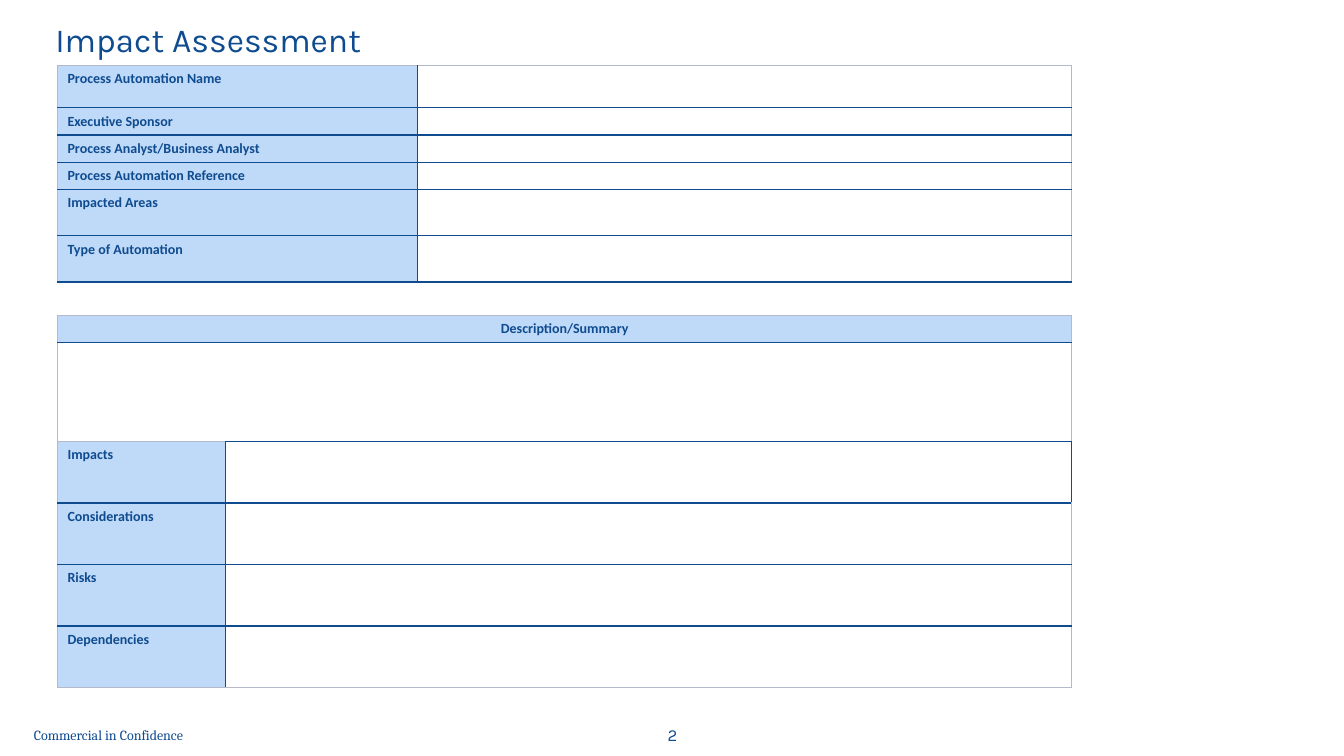
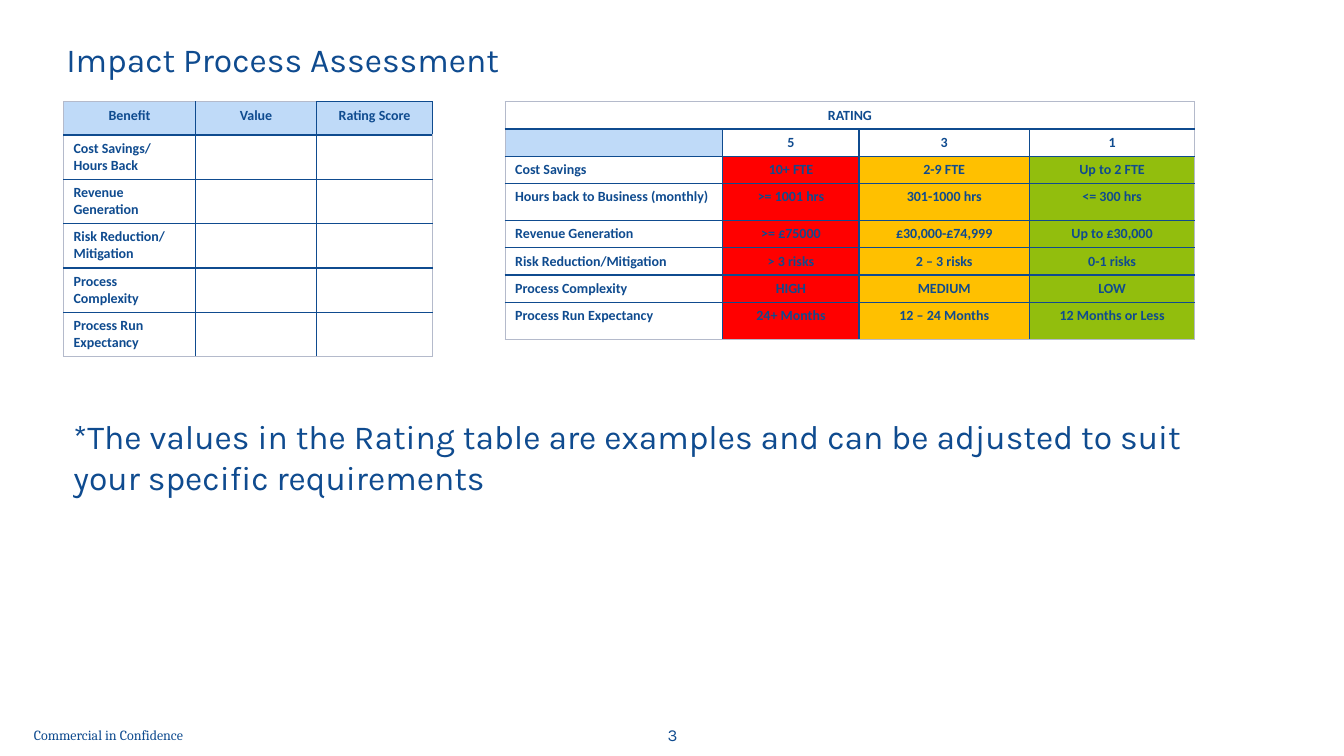
"""Build the two impact assessment slides."""
from dataclasses import dataclass

from lxml import etree
from pptx import Presentation
from pptx.dml.color import RGBColor
from pptx.enum.text import MSO_ANCHOR, PP_ALIGN
from pptx.oxml.ns import qn
from pptx.util import Emu, Pt

EMU_PER_PX = 9144
LEFT, CENTER = PP_ALIGN.LEFT, PP_ALIGN.CENTER
TOP, MIDDLE = MSO_ANCHOR.TOP, MSO_ANCHOR.MIDDLE


@dataclass(frozen=True)
class Theme:
    """Colours, fonts and type sizes of the deck."""
    navy: str = "0F4B8F"
    sky: str = "BFDAF8"
    white: str = "FFFFFF"
    edge: str = "B4BACB"
    red: str = "FF0000"
    amber: str = "FFC000"
    green: str = "92BE0D"
    title_font: str = "Karla"
    table_font: str = "Calibri"
    footer_font: str = "Cambria"
    title_size: int = 24
    number_size: int = 12
    small_size: int = 10
    line_width: float = 1
    edge_width: float = 0.75


THEME = Theme()


@dataclass(frozen=True)
class Label:
    """A text box with one paragraph."""
    text: str
    x: int
    y: int
    w: int
    h: int
    font: str = THEME.title_font
    size: int = THEME.title_size
    align: PP_ALIGN = LEFT
    anchor: MSO_ANCHOR = TOP
    inset: tuple[int, int] = (10, 5)


@dataclass(frozen=True)
class Grid:
    """A table with header rows, body column fills and accented borders."""
    x: int
    y: int
    cols: tuple[int, ...]
    heights: tuple[int, ...]
    texts: tuple[tuple[str, ...], ...]
    body_fills: tuple[str, ...]
    head_fills: tuple[tuple[str, ...], ...] = ()
    merge_top: bool = False
    accents: tuple[tuple[int, int, str], ...] = ()


@dataclass(frozen=True)
class Page:
    """The content of one slide."""
    number: int
    labels: tuple[Label, ...]
    grids: tuple[Grid, ...]


def px(value: int) -> Emu:
    """Turn px into EMU."""
    return Emu(value * EMU_PER_PX)


def style_run(r, font: str, size: int, bold: bool = False) -> None:
    """Format a run in navy."""
    r.font.name = font
    r.font.size = Pt(size)
    r.font.bold = bold
    r.font.color.rgb = RGBColor.from_string(THEME.navy)


def draw_label(s, label: Label) -> None:
    """Draw a text box."""
    sp = s.shapes.add_textbox(px(label.x), px(label.y), px(label.w), px(label.h))
    tf = sp.text_frame
    tf.word_wrap = True
    tf.vertical_anchor = label.anchor
    tf.margin_left = tf.margin_right = px(label.inset[0])
    tf.margin_top = tf.margin_bottom = px(label.inset[1])
    p = tf.paragraphs[0]
    p.text = label.text
    p.alignment = label.align
    style_run(p.runs[0], label.font, label.size)


def draw_border(cell, side: str, color: str, width: float) -> None:
    """Add a solid border to one side of a cell."""
    tc_pr = cell._tc.get_or_add_tcPr()
    ln = etree.SubElement(tc_pr, qn(f"a:ln{side}"), w=str(Pt(width)))
    fill = etree.SubElement(ln, qn("a:solidFill"))
    etree.SubElement(fill, qn("a:srgbClr"), val=color)


def draw_borders(cell, grid: Grid, row: int, col: int) -> None:
    """Draw pale outer and navy inner borders."""
    merged = grid.merge_top and row == 0
    outer = {
        "L": col == 0 or merged,
        "R": col == len(grid.cols) - 1 or merged,
        "T": row == 0,
        "B": row == len(grid.heights) - 1,
    }
    for side, is_outer in outer.items():
        if is_outer and (row, col, side) not in grid.accents:
            draw_border(cell, side, THEME.edge, THEME.edge_width)
        else:
            draw_border(cell, side, THEME.navy, THEME.line_width)


def fill_text(cell, text: str, align: PP_ALIGN) -> None:
    """Write a cell, keeping empty ones at the table type size."""
    p = cell.text_frame.paragraphs[0]
    if text:
        p.text = text
        p.alignment = align
        style_run(p.runs[0], THEME.table_font, THEME.small_size, True)
    else:
        etree.SubElement(p._p, qn("a:endParaRPr"), sz=str(THEME.small_size * 100))


def draw_grid(s, grid: Grid) -> None:
    """Draw a table."""
    frame = s.shapes.add_table(
        len(grid.heights), len(grid.cols), px(grid.x), px(grid.y),
        px(sum(grid.cols)), px(sum(grid.heights)))
    table = frame.table
    table.first_row = table.horz_banding = False
    for column, width in zip(table.columns, grid.cols):
        column.width = px(width)
    if grid.merge_top:
        table.cell(0, 0).merge(table.cell(0, len(grid.cols) - 1))
    heads = len(grid.head_fills)
    for row, height in enumerate(grid.heights):
        table.rows[row].height = px(height)
        fills = grid.head_fills[row] if row < heads else grid.body_fills
        for col, color in enumerate(fills):
            cell = table.cell(row, col)
            texts = grid.texts[row]
            align = CENTER if row < heads or col else LEFT
            fill_text(cell, texts[col] if col < len(texts) else "", align)
            draw_borders(cell, grid, row, col)
            cell.fill.solid()
            cell.fill.fore_color.rgb = RGBColor.from_string(color)


def draw_page(prs, page: Page) -> None:
    """Draw one slide with its footer."""
    s = prs.slides.add_slide(prs.slide_layouts[6])
    footer = Label("Commercial in Confidence", 0, 709, 215, 40, THEME.footer_font,
                   THEME.small_size, CENTER, MIDDLE, (3, 3))
    number = Label(str(page.number), 632, 709, 70, 40, size=THEME.number_size,
                   align=CENTER, anchor=MIDDLE)
    for grid in page.grids:
        draw_grid(s, grid)
    for label in (footer, number, *page.labels):
        draw_label(s, label)


LABEL_FILLS = (THEME.sky, THEME.white)

DETAILS = Grid(
    57, 65, (357, 649), (42, 27, 27, 27, 46, 46),
    (("Process Automation Name",), ("Executive Sponsor",),
     ("Process Analyst/Business Analyst",), ("Process Automation Reference",),
     ("Impacted Areas",), ("Type of Automation",)),
    LABEL_FILLS, accents=((5, 0, "B"), (5, 1, "B")))

SUMMARY = Grid(
    57, 313, (1006,), (27, 98), (("Description/Summary",), ()),
    (THEME.white,), ((THEME.sky,),))

IMPACTS = Grid(
    57, 438, (167, 839), (61,) * 4,
    (("Impacts",), ("Considerations",), ("Risks",), ("Dependencies",)),
    LABEL_FILLS, accents=((0, 1, "T"), (0, 1, "R")))

BENEFITS = Grid(
    63, 101, (131, 120, 115), (33,) + (44,) * 5,
    (("Benefit", "Value", "Rating Score"), ("Cost Savings/ Hours Back",),
     ("Revenue Generation",), ("Risk Reduction/ Mitigation",),
     ("Process Complexity",), ("Process Run Expectancy",)),
    (THEME.white,) * 3, ((THEME.sky,) * 3,),
    accents=((0, 2, "T"), (0, 2, "R")))

RATING = Grid(
    501, 101, (216, 135, 169, 164), (27, 27, 27, 37, 27, 27, 27, 37),
    (("RATING",),
     ("", "5", "3", "1"),
     ("Cost Savings", "10+ FTE", "2-9 FTE", "Up to 2 FTE"),
     ("Hours back to Business (monthly)", ">= 1001 hrs", "301-1000 hrs", "<= 300 hrs"),
     ("Revenue Generation", ">= £75000", "£30,000-£74,999", "Up to £30,000"),
     ("Risk Reduction/Mitigation", "> 3 risks", "2 – 3 risks", "0-1 risks"),
     ("Process Complexity", "HIGH", "MEDIUM", "LOW"),
     ("Process Run Expectancy", "24+ Months", "12 – 24 Months", "12 Months or Less")),
    (THEME.white, THEME.red, THEME.amber, THEME.green),
    ((THEME.white,) * 4, (THEME.sky,) + (THEME.white,) * 3),
    merge_top=True)

NOTE = ("*The values in the Rating table are examples and can be adjusted "
        "to suit your specific requirements")

PAGES = (
    Page(2, (Label("Impact Assessment", 45, 14, 593, 50),),
         (DETAILS, SUMMARY, IMPACTS)),
    Page(3, (Label("Impact Process Assessment", 56, 34, 593, 50),
             Label(NOTE, 63, 408, 1165, 91)),
         (BENEFITS, RATING)),
)


def main() -> None:
    """Build and save the deck."""
    prs = Presentation()
    prs.slide_width, prs.slide_height = px(1333), px(750)
    for page in PAGES:
        draw_page(prs, page)
    prs.save("out.pptx")


if __name__ == "__main__":
    main()
